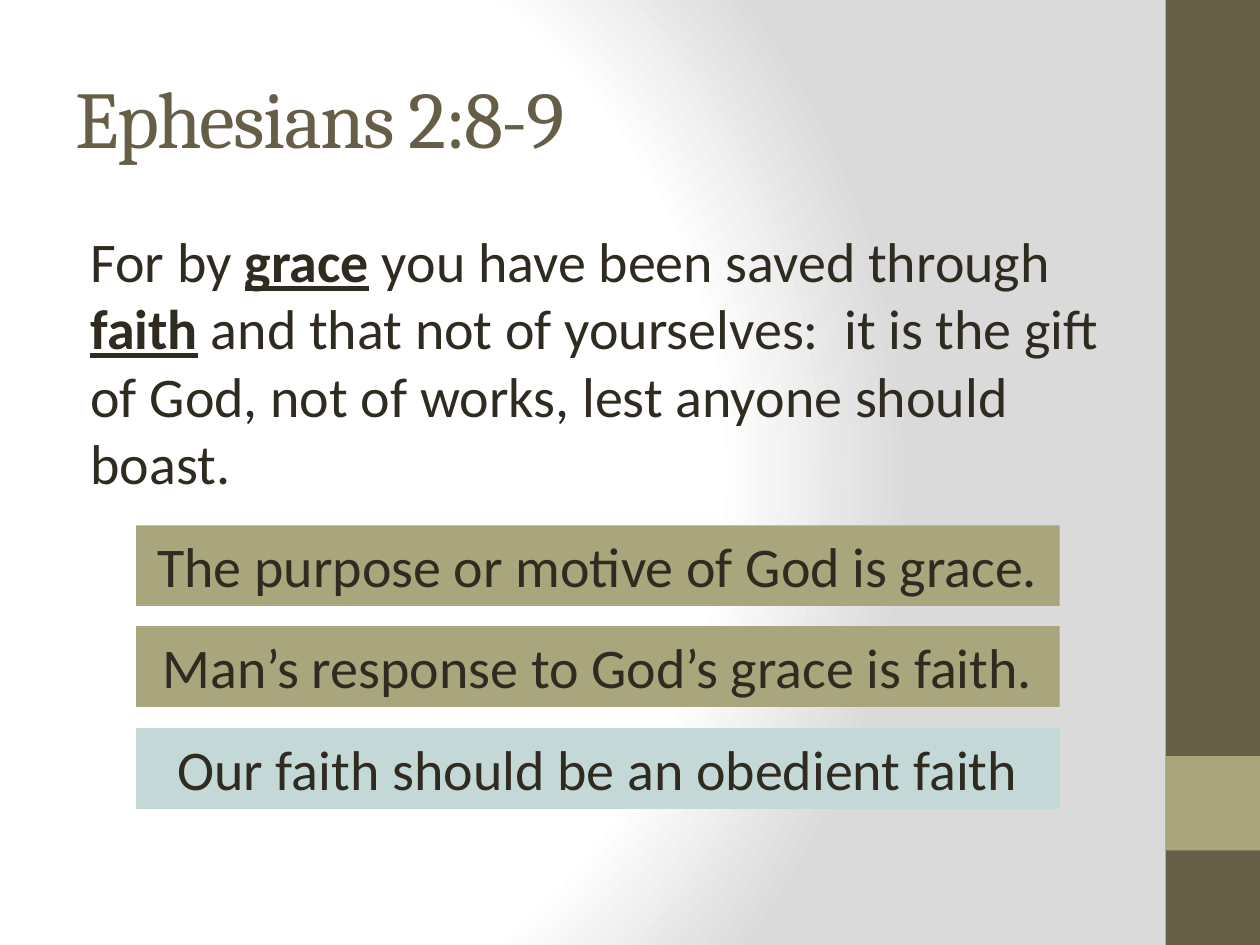
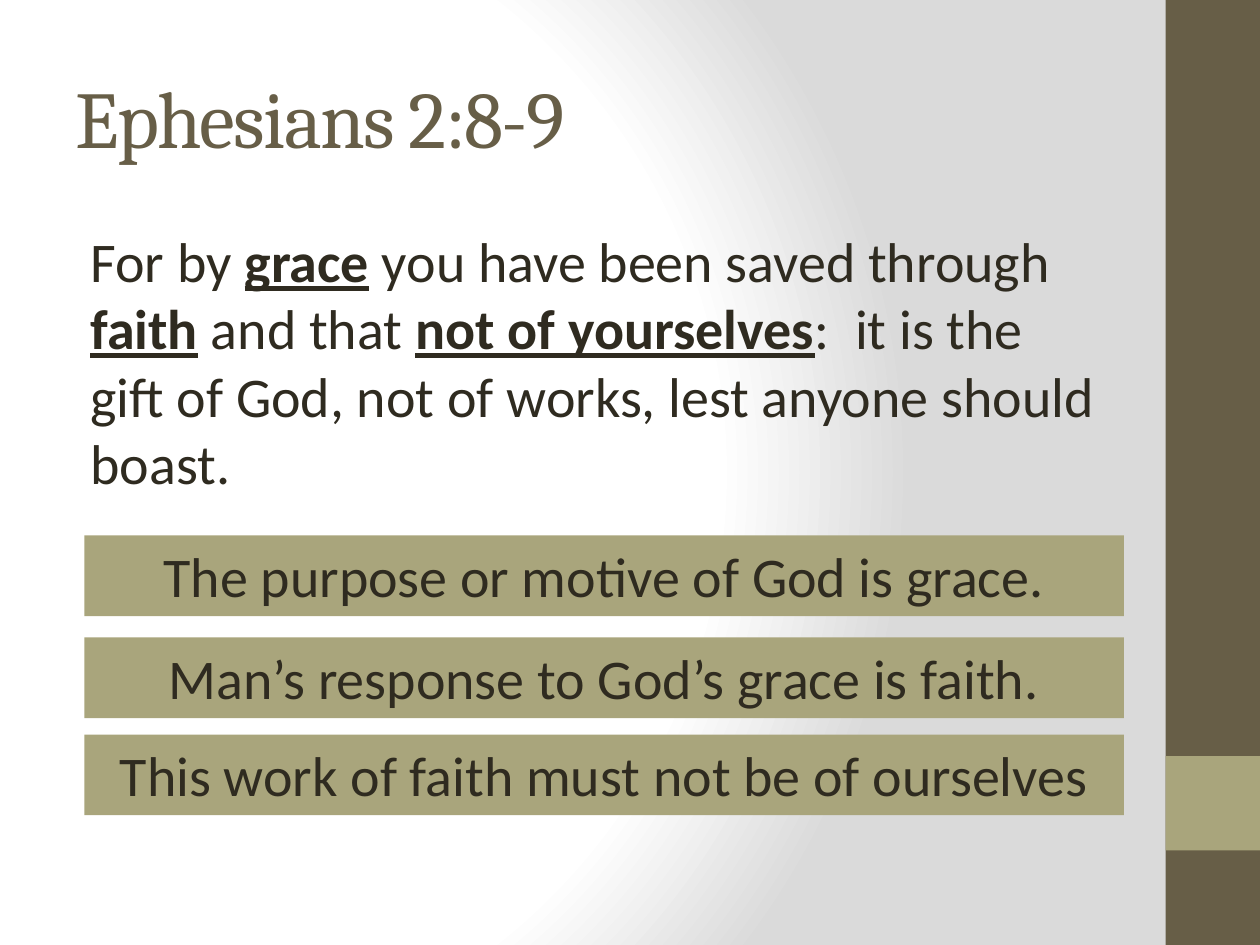
from pptx import Presentation
from pptx.dml.color import RGBColor
from pptx.enum.shapes import MSO_SHAPE
from pptx.enum.text import MSO_ANCHOR, PP_ALIGN
from pptx.oxml import parse_xml
from pptx.oxml.ns import nsdecls
from pptx.util import Inches, Pt

RECT = MSO_SHAPE.RECTANGLE
MIDDLE, TOP = MSO_ANCHOR.MIDDLE, MSO_ANCHOR.TOP
CENTER = PP_ALIGN.CENTER

COLORS = {
    "white": "FFFFFF",
    "gray": "DADADA",
    "brown": "675E47",
    "olive": "A9A57C",
    "aqua": "C4D8D7",
    "text": "2F2B20",
}
HEADING, BODY = "Cambria", "Calibri"
TITLE = "Ephesians 2:8-9"
GRACE = "The purpose or motive of God is grace."
FAITH = "Man’s response to God’s grace is faith."


class Deck:
    def __init__(self):
        self.prs = Presentation()
        self.prs.slide_width = Inches(10)
        self.prs.slide_height = Inches(7.5)
        self.s = None

    def slide(self, title):
        self.s = self.prs.slides.add_slide(self.prs.slide_layouts[6])
        self.background()
        self.rect(9.25, 0, 0.75, 7.5, "brown")
        self.rect(9.25, 6, 0.75, 0.75, "olive")
        self.title(title)

    def background(self):
        stops = [(0, "white"), (75, "white"), (100, "gray")]
        gs = "".join(
            f'<a:gs pos="{pos * 1000}"><a:srgbClr val="{COLORS[color]}"/></a:gs>'
            for pos, color in stops
        )
        bg = parse_xml(
            f'<p:bg {nsdecls("p", "a")}><p:bgPr><a:gradFill rotWithShape="1">'
            f'<a:gsLst>{gs}</a:gsLst><a:path path="circle">'
            '<a:fillToRect l="20000" t="50000" r="100000" b="50000"/></a:path>'
            "</a:gradFill><a:effectLst/></p:bgPr></p:bg>"
        )
        self.s._element.cSld.insert(0, bg)

    def rect(self, x, y, w, h, color):
        sp = self.s.shapes.add_shape(RECT, Inches(x), Inches(y), Inches(w), Inches(h))
        sp.shadow.inherit = False
        sp.fill.solid()
        sp.fill.fore_color.rgb = RGBColor.from_string(COLORS[color])
        sp.line.fill.background()
        return sp

    def textbox(self, y, h, anchor):
        sp = self.s.shapes.add_textbox(Inches(0.5), Inches(y), Inches(8.33), Inches(h))
        tf = sp.text_frame
        tf.word_wrap = True
        tf.vertical_anchor = anchor
        return tf.paragraphs[0]

    def style(self, r, font=BODY, size=32, color="text"):
        r.font.name = font
        r.font.size = Pt(size)
        r.font.color.rgb = RGBColor.from_string(COLORS[color])

    def title(self, text):
        p = self.textbox(0.3, 1.25, MIDDLE)
        p.text = text
        r = p.runs[0]
        self.style(r, HEADING, 46, "brown")
        r.font._element.set("spc", "-100")

    def verse(self, *parts):
        p = self.textbox(1.75, 2.42, TOP)
        pPr = p._p.get_or_add_pPr()
        pPr.set("marL", str(Inches(0.12)))
        pPr.set("indent", "0")
        pPr.append(parse_xml(
            f'<a:spcBef {nsdecls("a")}><a:spcPct val="20000"/></a:spcBef>'))
        for i, part in enumerate(parts):
            r = p.add_run()
            r.text = part
            self.style(r)
            r.font.bold = r.font.underline = i % 2 == 1

    def point(self, x, y, w, text, color="olive"):
        tf = self.rect(x, y, w, 0.64, color).text_frame
        tf.word_wrap = True
        tf.vertical_anchor = TOP
        p = tf.paragraphs[0]
        p.text = text
        p.alignment = CENTER
        self.style(p.runs[0])


def main():
    deck = Deck()
    opening = ("For by ", "grace", " you have been saved through ", "faith")
    ending = ":  it is the gift of God, not of works, lest anyone should boast."

    deck.slide(TITLE)
    deck.verse(*opening, " and that not of yourselves" + ending)
    deck.point(1.08, 4.17, 7.33, GRACE)
    deck.point(1.08, 4.97, 7.33, FAITH)
    deck.point(1.08, 5.78, 7.33, "Our faith should be an obedient faith", "aqua")

    deck.slide(TITLE)
    deck.verse(*opening, " and that ", "not of yourselves", ending)
    deck.point(0.67, 4.25, 8.25, GRACE)
    deck.point(0.67, 5.06, 8.25, FAITH)
    deck.point(0.67, 5.83, 8.25, "This work of faith must not be of ourselves")

    deck.prs.save("out.pptx")


if __name__ == "__main__":
    main()
